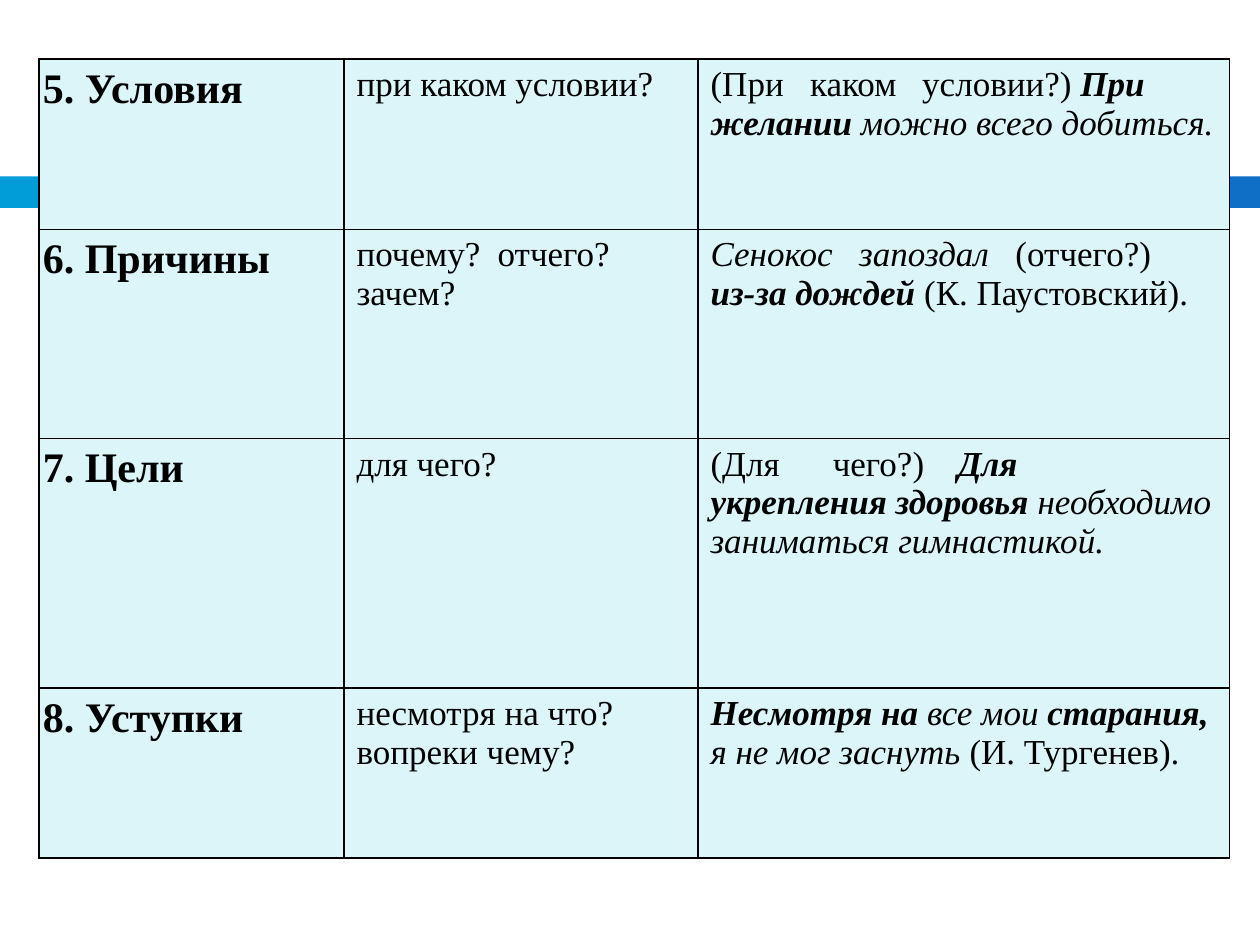
from lxml import etree
from pptx import Presentation
from pptx.dml.color import RGBColor
from pptx.enum.shapes import MSO_SHAPE
from pptx.oxml.ns import qn
from pptx.util import Inches, Pt

RECT = MSO_SHAPE.RECTANGLE
FONT = "Times New Roman"
COLORS = {"cyan": "009DD9", "blue": "0F6FC6", "cell": "DBF5F9", "ink": "000000"}
COLUMNS = [2.42, 2.81, 4.22]
HEIGHTS = [1.35, 1.66, 1.98, 1.35]
ROWS = [
    ("5. Условия", ["при каком условии?"], [],
     [("(При\tкаком\tусловии?) ", ""), ("При желании ", "bi"),
      ("можно всего добиться.", "i")], [0.79, 1.68]),
    ("6. Причины", ["почему?\tотчего? зачем?"], [1.12],
     [("Сенокос\tзапоздал\t", "i"), ("(отчего?)\n", ""),
      ("из-за дождей ", "bi"), ("(К. Паустовский).", "")], [1.18, 2.42]),
    ("7. Цели", ["для чего?"], [],
     [("(Для\tчего?)\t", ""), ("Для\nукрепления здоровья ", "bi"),
      ("необходимо заниматься гимнастикой.", "i")], [0.97, 1.96]),
    ("8. Уступки", ["несмотря на что?", "вопреки чему?"], [],
     [("Несмотря на ", "bi"), ("все мои ", "i"), ("старания, ", "bi"),
      ("я не мог заснуть ", "i"), ("(И. Тургенев).", "")], []),
]


def color(name):
    """Return a palette colour."""
    return RGBColor.from_string(COLORS[name])


def add_bar(s, left, top, width, height, name):
    """Draw one plain coloured bar."""
    bar = s.shapes.add_shape(RECT, Inches(left), Inches(top), Inches(width), Inches(height))
    bar.shadow.inherit = False
    bar.fill.solid()
    bar.fill.fore_color.rgb = color(name)
    bar.line.fill.background()


def add_runs(p, runs, size):
    """Add styled runs, turning newlines into line breaks."""
    for text, style in runs:
        for i, part in enumerate(text.split("\n")):
            if i:
                p.add_line_break()
            if not part:
                continue
            r = p.add_run()
            r.text = part
            r.font.name, r.font.size = FONT, Pt(size)
            r.font.bold, r.font.italic = "b" in style, "i" in style
            r.font.color.rgb = color("ink")


def set_tabs(p, stops):
    """Set left tab stops, given in inches."""
    if stops:
        tabs = etree.SubElement(p._p.get_or_add_pPr(), qn("a:tabLst"))
        for stop in stops:
            etree.SubElement(tabs, qn("a:tab"), pos=str(Inches(stop)), algn="l")


def format_cell(cell):
    """Give a cell its thin black borders and pale fill."""
    tc_pr = cell._tc.get_or_add_tcPr()
    for side in ("lnL", "lnR", "lnT", "lnB"):
        ln = etree.SubElement(tc_pr, qn(f"a:{side}"), w=str(Pt(1)))
        fill = etree.SubElement(ln, qn("a:solidFill"))
        etree.SubElement(fill, qn("a:srgbClr"), val=COLORS["ink"])
    cell.fill.solid()
    cell.fill.fore_color.rgb = color("cell")


def fill_cell(cell, paragraphs, size=20, stops=()):
    """Write paragraphs of runs into a cell."""
    format_cell(cell)
    tf = cell.text_frame
    for i, runs in enumerate(paragraphs):
        p = tf.add_paragraph() if i else tf.paragraphs[0]
        set_tabs(p, stops)
        add_runs(p, runs, size)


def fill_heading(cell, text):
    """Write the bold name of an adverbial type."""
    fill_cell(cell, [[(text, "b")]], size=24)
    cell.margin_left = cell.margin_right = Inches(0.03)
    cell.margin_top = cell.margin_bottom = 0
    cell.text_frame.paragraphs[0].line_spacing = 1.15


def add_adverbials(s, left, top):
    """Build the table of adverbial types, questions and examples."""
    table = s.shapes.add_table(
        len(ROWS), len(COLUMNS), Inches(left), Inches(top),
        Inches(sum(COLUMNS)), Inches(sum(HEIGHTS))).table
    table.first_row = table.horz_banding = False
    for column, width in zip(table.columns, COLUMNS):
        column.width = Inches(width)
    for row, height, content in zip(table.rows, HEIGHTS, ROWS):
        row.height = Inches(height)
        heading, questions, question_tabs, example, example_tabs = content
        fill_heading(row.cells[0], heading)
        fill_cell(row.cells[1], [[(q, "")] for q in questions], stops=question_tabs)
        fill_cell(row.cells[2], [example], stops=example_tabs)


def main():
    """Build and save the slide."""
    prs = Presentation()
    prs.slide_width, prs.slide_height = Inches(10), Inches(7.5)
    s = prs.slides.add_slide(prs.slide_layouts[6])
    add_bar(s, 0, 1.4, 0.58, 0.25, "cyan")
    add_bar(s, 0.65, 1.4, 9.35, 0.25, "blue")
    add_adverbials(s, 0.31, 0.47)
    prs.save("out.pptx")


if __name__ == "__main__":
    main()
